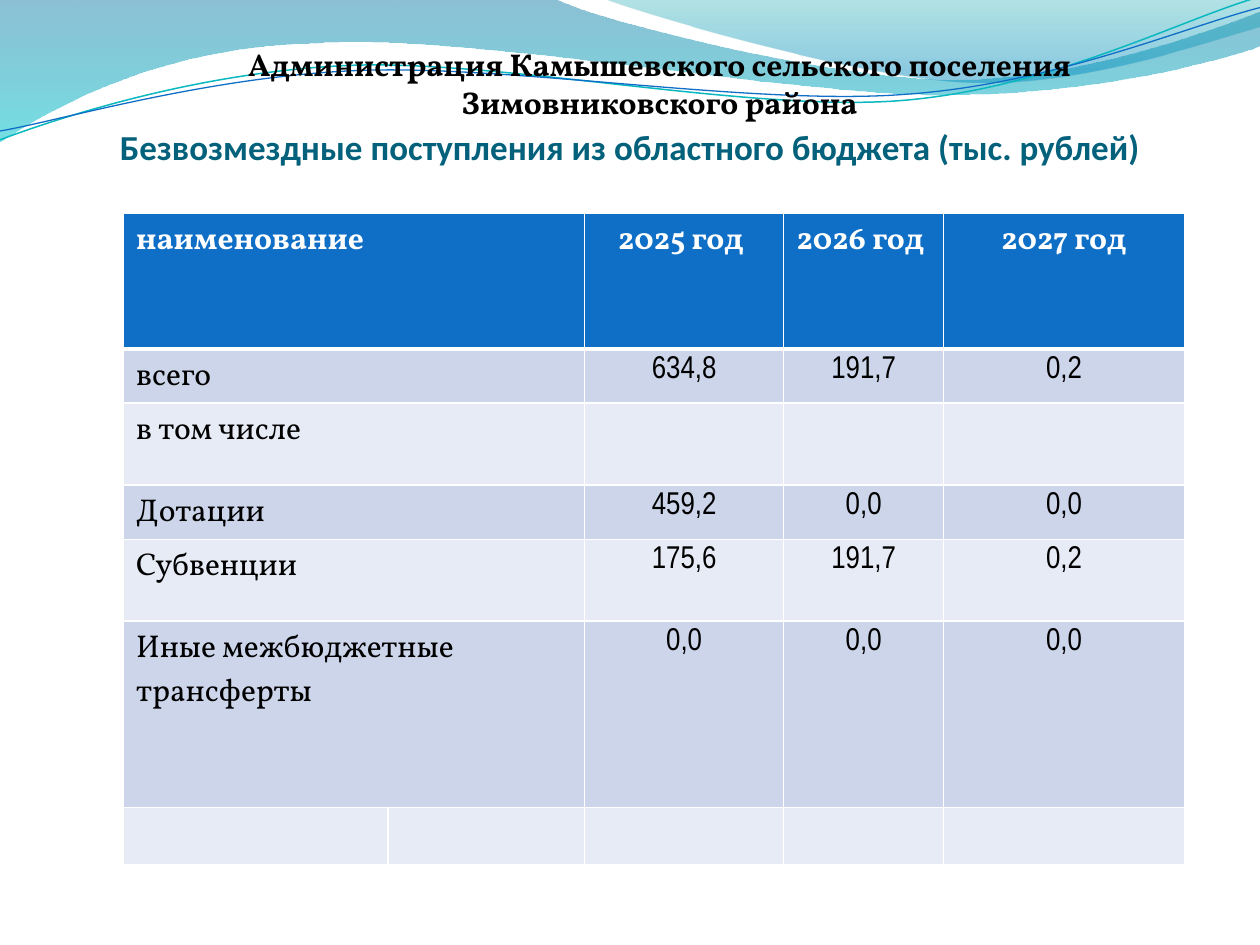
import math
from dataclasses import dataclass

from lxml import etree
from pptx import Presentation
from pptx import util as u
from pptx.dml.color import RGBColor
from pptx.enum import text
from pptx.oxml.ns import qn

COLORS = {
    "white": "FFFFFF", "black": "000000", "title": "04617B",
    "header": "0F6FC6", "dark_band": "CCD5EA", "light_band": "E7EBF5",
    "deep": "0074A1", "cyan": "00C6CF", "teal": "00A1A9", "sky": "008BBF",
    "teal_line": "0AB8BF", "blue_line": "0F6FC6",
}
SERIF, NARROW, SANS = "Vollkorn", "Arial Narrow", "Calibri"


@dataclass
class Stop:
    position: float
    color: str
    opacity: int


@dataclass
class Wave:
    """Segments of two numbers are lines, of six numbers cubic curves."""
    frame: tuple[float, float, float, float]
    start: tuple[float, float]
    segments: list[tuple[float, ...]]
    stops: tuple[Stop, ...] = ()
    line: str = ""
    width: float = 0
    rotation: float = 0


@dataclass
class Caption:
    text: str
    left: float
    top: float
    width: float
    height: float
    font: str
    size: float
    color: str
    margins: tuple[float, float, float, float]


WAVES = [
    Wave((-0.01, -0.01, 10.02, 1.14), (0, 0),
         [(4.4, -0.01), (4.76, 0.17, 6.64, 0.63, 7.58, 0.63),
          (8.53, 0.63, 9.58, 0.26, 10, 0.09), (10.01, 0.36),
          (9.83, 0.44, 8.7, 0.76, 7.46, 0.75),
          (6.22, 0.75, 3.82, 0.28, 2.57, 0.34),
          (1.29, 0.36, 0.46, 0.83, -0.01, 1.13), (0, 0)],
         stops=(Stop(0, "deep", 45), Stop(1, "cyan", 55))),
    Wave((4.79, -0.01, 5.21, 0.7), (4.79, -0.01),
         [(5.09, 0.11, 6.82, 0.62, 7.69, 0.65),
          (8.56, 0.69, 9.61, 0.32, 10, 0.21), (10, 0), (4.79, -0.01)],
         stops=(Stop(0, "teal", 30), Stop(0.8, "sky", 45))),
    Wave((-0.02, 0.22, 10.02, 0.71), (0, 1.11),
         [(0.48, 0.93, 1.58, 0.57, 2.77, 0.52),
          (3.95, 0.47, 5.93, 0.89, 7.13, 0.8),
          (8.33, 0.71, 9.38, 0.15, 9.98, -0.02)],
         line="teal_line", width=0.85, rotation=357.3),
    Wave((-0.02, 0.3, 10.03, 0.58), (0, 1.04),
         [(0.47, 0.96, 1.64, 0.61, 2.83, 0.56),
          (4.03, 0.51, 5.97, 0.84, 7.17, 0.75),
          (8.36, 0.67, 9.41, 0.21, 10, 0.06)],
         line="blue_line", width=0.75, rotation=357.3),
]

TITLE = Caption("Безвозмездные поступления из областного бюджета (тыс. рублей)",
                0.46, 0.77, 9.08, 0.56, SANS, 20, "title", (0, 0.05, 0, 0))
ADMINISTRATION = Caption(
    "Администрация Камышевского сельского поселения Зимовниковского района",
    1.77, 0, 6.93, 1.01, SERIF, 18, "black", (0.1, 0.05, 0.1, 0.05))

COLUMN_WIDTHS = [2.1, 1.56, 1.58, 1.27, 1.91]
ROW_HEIGHTS = [1.08, 0.43, 0.65, 0.43, 0.65, 1.48, 0.45]
# Each row: name, then one value per year
ROWS = [
    ("наименование", "2025 год ", "2026 год ", "2027 год"),
    ("всего", "634,8", "191,7", "0,2"),
    ("в том числе", "", "", ""),
    ("Дотации", "459,2", "0,0", "0,0"),
    ("Субвенции", "175,6", "191,7", "0,2"),
    ("Иные межбюджетные трансферты", "0,0", "0,0", "0,0"),
    ("", "", "", ""),
]


def rgb(name: str) -> RGBColor:
    return RGBColor.from_string(COLORS[name])


def add_segment(outline, kind: str, numbers: tuple[float, ...], wave: Wave) -> None:
    """Add one path step, turned back into the unrotated frame of the wave."""
    left, top, width, height = wave.frame
    angle = math.radians(-wave.rotation)
    step = etree.SubElement(outline, qn(f"a:{kind}"))
    for x, y in zip(numbers[::2], numbers[1::2]):
        dx, dy = x - left - width / 2, y - top - height / 2
        local_x = dx * math.cos(angle) - dy * math.sin(angle) + width / 2
        local_y = dx * math.sin(angle) + dy * math.cos(angle) + height / 2
        etree.SubElement(step, qn("a:pt"), x=str(u.Inches(local_x)),
                         y=str(u.Inches(local_y)))


def draw_wave(page, wave: Wave) -> None:
    left, top, width, height = wave.frame
    # The diagonal sets the frame, the curves then take its place
    builder = page.shapes.build_freeform(u.Inches(left), u.Inches(top))
    builder.add_line_segments([(u.Inches(left + width), u.Inches(top + height))],
                              close=False)
    shape = builder.convert_to_shape()
    outline = next(shape.element.iter(qn("a:path")))
    for child in list(outline):
        outline.remove(child)
    add_segment(outline, "moveTo", wave.start, wave)
    for numbers in wave.segments:
        kind = "lnTo" if len(numbers) == 2 else "cubicBezTo"
        add_segment(outline, kind, numbers, wave)
    shape.rotation = wave.rotation
    shape.shadow.inherit = False
    if not wave.stops:
        shape.fill.background()
        shape.line.color.rgb = rgb(wave.line)
        shape.line.width = u.Pt(wave.width)
        return
    etree.SubElement(outline, qn("a:close"))
    shape.line.fill.background()
    shape.fill.gradient()
    shape.fill.gradient_angle = 270
    for target, stop in zip(shape.fill.gradient_stops, wave.stops):
        target.position = stop.position
        target.color.rgb = rgb(stop.color)
    gradient = shape.element.spPr.find(qn("a:gradFill"))
    for color, stop in zip(gradient.iter(qn("a:srgbClr")), wave.stops):
        etree.SubElement(color, qn("a:alpha"), val=str(stop.opacity * 1000))


def style_paragraph(para, font: str, size: float, color: str, bold: bool) -> None:
    for span in para.runs:
        span.font.name = font
        span.font.size = u.Pt(size)
        span.font.bold = bold
        span.font.color.rgb = rgb(color)


def draw_caption(page, caption: Caption) -> None:
    box = page.shapes.add_textbox(u.Inches(caption.left), u.Inches(caption.top),
                                  u.Inches(caption.width), u.Inches(caption.height))
    frame = box.text_frame
    frame.word_wrap = True
    frame.vertical_anchor = text.MSO_ANCHOR.BOTTOM
    (frame.margin_left, frame.margin_top, frame.margin_right,
     frame.margin_bottom) = map(u.Inches, caption.margins)
    frame.text = caption.text
    para = frame.paragraphs[0]
    para.alignment = text.PP_ALIGN.CENTER
    style_paragraph(para, caption.font, caption.size, caption.color, True)


def draw_borders(cell, top: float, bottom: float) -> None:
    properties = cell._tc.get_or_add_tcPr()
    for side, points in (("L", 1), ("R", 1), ("T", top), ("B", bottom)):
        line = etree.SubElement(properties, qn(f"a:ln{side}"), w=str(u.Pt(points)))
        fill = etree.SubElement(line, qn("a:solidFill"))
        etree.SubElement(fill, qn("a:srgbClr"), val=COLORS["white"])


def draw_table(page) -> None:
    table = page.shapes.add_table(
        len(ROW_HEIGHTS), len(COLUMN_WIDTHS), u.Inches(0.98), u.Inches(1.69),
        u.Inches(sum(COLUMN_WIDTHS)), u.Inches(sum(ROW_HEIGHTS))).table
    table.first_row = table.horz_banding = False
    for column, width in zip(table.columns, COLUMN_WIDTHS):
        column.width = u.Inches(width)
    for index, (height, (name, *values)) in enumerate(zip(ROW_HEIGHTS, ROWS)):
        table.rows[index].height = u.Inches(height)
        header = index == 0
        band = "header" if header else "dark_band" if index % 2 else "light_band"
        for column, content in enumerate((name, "", *values)):
            cell = table.cell(index, column)
            draw_borders(cell, 3 if index == 1 else 1, 3 if header else 1)
            cell.fill.solid()
            cell.fill.fore_color.rgb = rgb(band)
            cell.text_frame.text = content
            para = cell.text_frame.paragraphs[0]
            is_value = column > 1
            if is_value:
                para.alignment = text.PP_ALIGN.CENTER
            style_paragraph(para, NARROW if is_value and not header else SERIF, 18,
                            "white" if header else "black", header)
        # The name spans two columns in every row but the empty last one
        if name:
            table.cell(index, 0).merge(table.cell(index, 1))


def main() -> None:
    deck = Presentation()
    deck.slide_width, deck.slide_height = u.Inches(10), u.Inches(7.5)
    page = deck.slides.add_slide(deck.slide_layouts[6])
    # Decorative waves
    for wave in WAVES:
        draw_wave(page, wave)
    # Title, table and the heading above
    draw_caption(page, TITLE)
    draw_table(page)
    draw_caption(page, ADMINISTRATION)
    deck.save("out.pptx")


if __name__ == "__main__":
    main()
